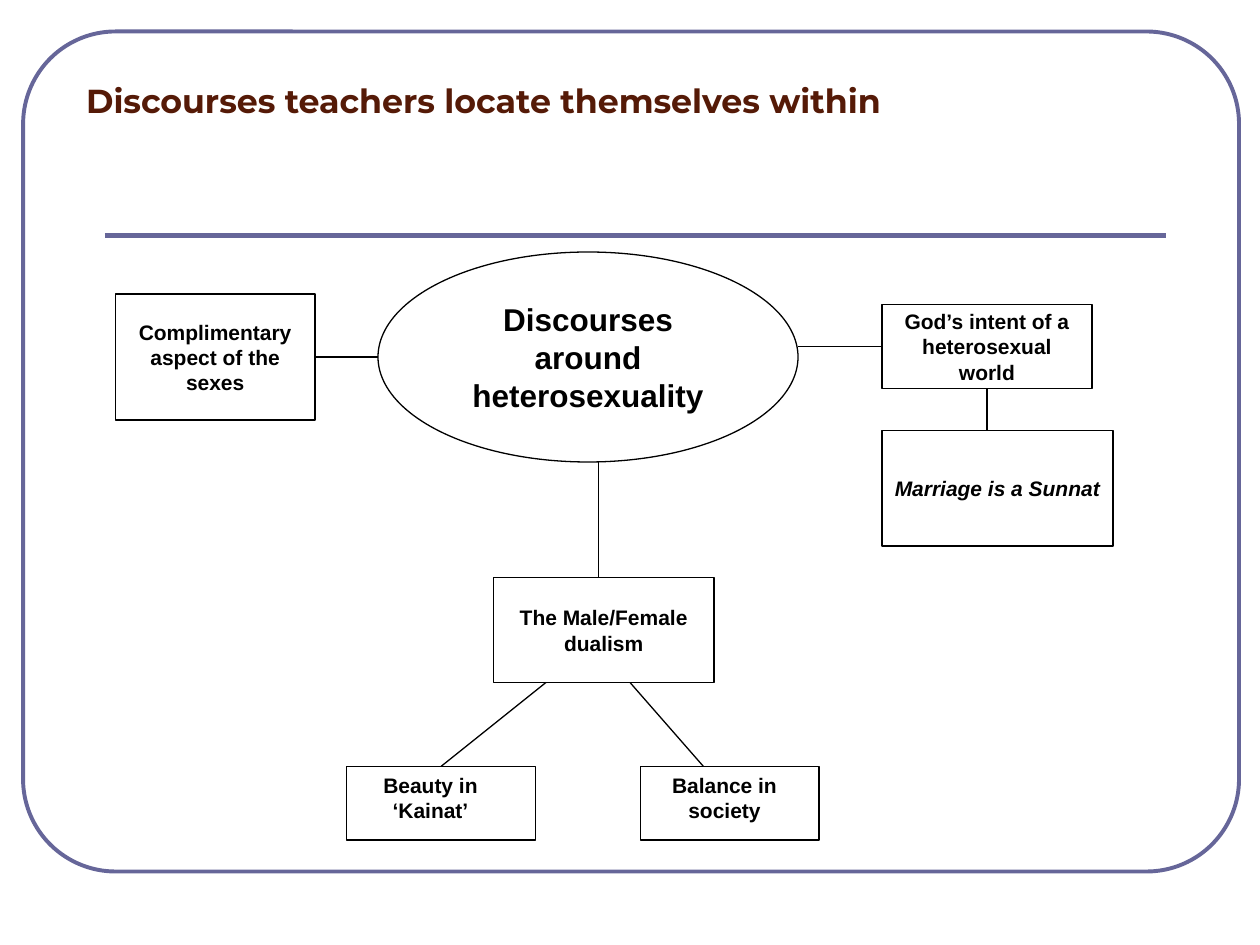
import pptx
import pptx.util
import pptx.dml.color
import pptx.enum.shapes
import pptx.enum.text
from dataclasses import dataclass
from lxml import etree

SHAPE = pptx.enum.shapes.MSO_SHAPE
ANCHOR = pptx.enum.text.MSO_ANCHOR
ALIGN = pptx.enum.text.PP_ALIGN
DRAWING_NS = "{http://schemas.openxmlformats.org/drawingml/2006/main}"


@dataclass(frozen=True)
class Theme:
    accent: str = "666699"
    title: str = "551A07"
    ink: str = "000000"
    title_font: str = "Montserrat"
    body_font: str = "Arial"
    title_size: float = 19
    hub_size: float = 18
    node_size: float = 12
    frame_line: float = 2.25
    rule_line: float = 3
    thin_line: float = 0.75


THEME = Theme()
CELL = pptx.util.Inches(1) / 12  # the slide is a grid of 120 columns by 90 rows


@dataclass(frozen=True)
class Box:
    """A region measured in grid cells."""
    col: float
    row: float
    cols: float
    rows: float

    def point(self, col, row):
        return round((self.col + col) * CELL), round((self.row + row) * CELL)

    def area(self, col, row, cols, rows):
        return *self.point(col, row), round(cols * CELL), round(rows * CELL)


def set_line(sp, color, width):
    sp.line.color.rgb = pptx.dml.color.RGBColor.from_string(color)
    sp.line.width = pptx.util.Pt(width)


def set_text(sp, text, font, size, color, anchor, align, italic=None):
    tf = sp.text_frame
    tf.text = text
    tf.word_wrap = True
    tf.vertical_anchor = anchor
    p = tf.paragraphs[0]
    p.alignment = align
    r = p.runs[0]
    r.font.name = font
    r.font.size = pptx.util.Pt(size)
    r.font.bold = True
    r.font.italic = italic
    r.font.color.rgb = pptx.dml.color.RGBColor.from_string(color)


def add_outline(s, kind, area, color, width):
    sp = s.shapes.add_shape(kind, *area)
    sp.shadow.inherit = False
    sp.fill.background()
    set_line(sp, color, width)
    return sp


def add_link(s, start, end, color, width):
    link = s.shapes.add_connector(
        pptx.enum.shapes.MSO_CONNECTOR.STRAIGHT, *start, *end)
    set_line(link, color, width)
    etree.SubElement(link._element.spPr, DRAWING_NS + "effectLst")


def add_frame(s, box):
    """Rounded border and the rule under the title."""
    frame = add_outline(s, SHAPE.ROUNDED_RECTANGLE,
                        box.area(0, 0, box.cols, box.rows),
                        THEME.accent, THEME.frame_line)
    frame.adjustments[0] = 0.11
    add_link(s, box.point(7.8, 19.4), box.point(108.8, 19.4),
             THEME.accent, THEME.rule_line)


def add_title(s, box):
    sp = s.shapes.title
    sp.left, sp.top, sp.width, sp.height = box.area(0, 0, box.cols, box.rows)
    set_text(sp, "Discourses teachers locate themselves within", THEME.title_font,
             THEME.title_size, THEME.title, ANCHOR.BOTTOM, ALIGN.LEFT)


def add_node(s, area, text, kind=SHAPE.RECTANGLE, size=THEME.node_size, italic=None):
    sp = add_outline(s, kind, area, THEME.ink, THEME.thin_line)
    set_text(sp, text, THEME.body_font, size, THEME.ink,
             ANCHOR.MIDDLE, ALIGN.CENTER, italic)


def add_leaf(s, box, col, row, cols, text):
    """Box with a narrower label aligned to its top left corner."""
    add_outline(s, SHAPE.RECTANGLE, box.area(col, row, cols, 7),
                THEME.ink, THEME.thin_line)
    label = s.shapes.add_textbox(*box.area(col, row, 16, 6))
    set_text(label, text, THEME.body_font, THEME.node_size, THEME.ink,
             ANCHOR.TOP, ALIGN.CENTER)


def add_diagram(s, box):
    # Hub
    add_node(s, box.area(25, 0, 40, 20), "Discourses around heterosexuality",
             SHAPE.OVAL, THEME.hub_size)

    # Branches
    add_node(s, box.area(0, 4, 19, 12), "Complimentary aspect of the sexes")
    add_node(s, box.area(73, 5, 20, 8), "God’s intent of a heterosexual world")
    add_node(s, box.area(73, 17, 22, 11), "Marriage is a Sunnat", italic=True)
    add_node(s, box.area(36, 31, 21, 10), "The Male/Female dualism")

    # Leaves
    add_leaf(s, box, 22, 49, 18, "Beauty in ‘Kainat’")
    add_leaf(s, box, 50, 49, 17, "Balance in society")

    # Links
    for start, end in [
        ((19, 10), (25, 10)),   # hub to complimentary aspect
        ((65, 9), (73, 9)),     # hub to intent
        ((83, 13), (83, 17)),   # intent to marriage
        ((46, 20), (46, 31)),   # hub to dualism
        ((41, 41), (31, 49)),   # dualism to beauty
        ((49, 41), (56, 49)),   # dualism to balance
    ]:
        add_link(s, box.point(*start), box.point(*end), THEME.ink, THEME.thin_line)


def main():
    prs = pptx.Presentation()
    prs.slide_width = pptx.util.Inches(10)
    prs.slide_height = pptx.util.Inches(7.5)
    s = prs.slides.add_slide(prs.slide_layouts[5])
    add_frame(s, Box(2.2, 3, 115.8, 80))
    add_title(s, Box(7, 0, 107, 12))
    add_diagram(s, Box(11, 24, 95, 56))
    prs.save("out.pptx")


if __name__ == "__main__":
    main()
